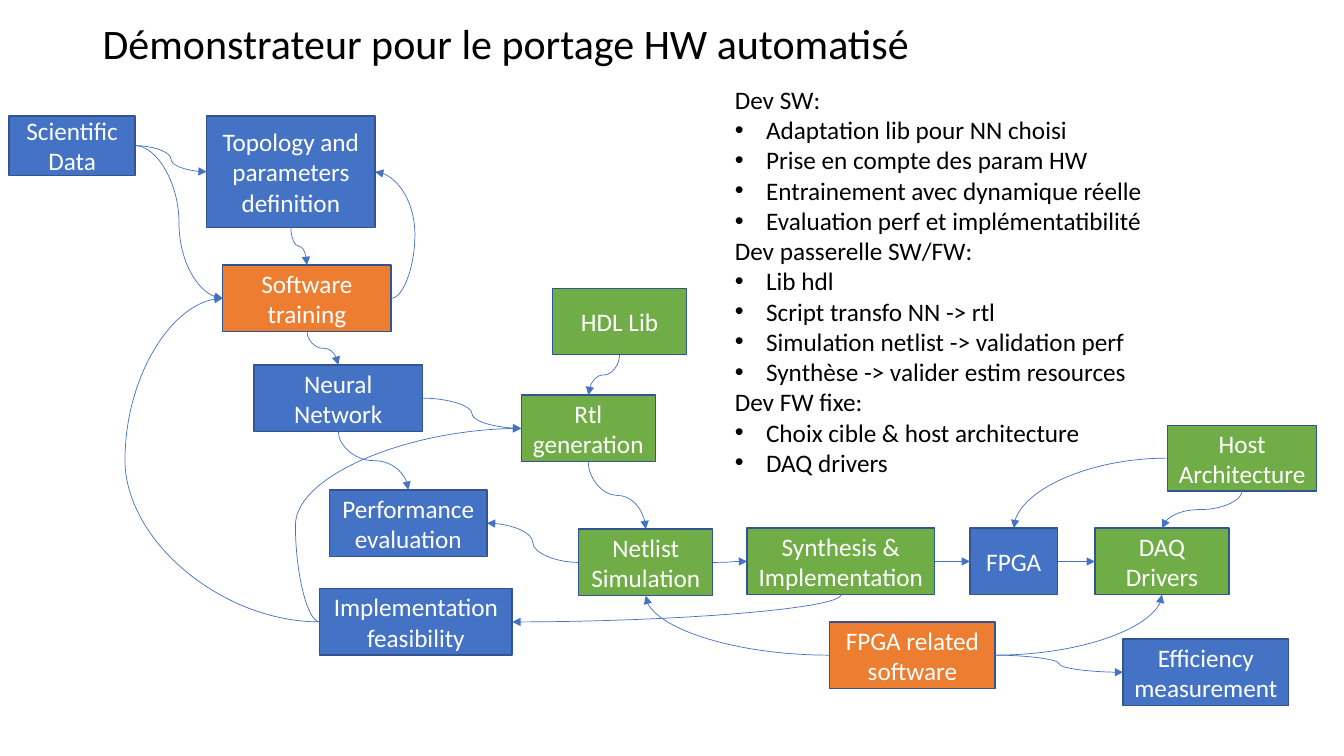
import pptx
import pptx.dml.color
import pptx.enum.shapes
import pptx.enum.text
import pptx.oxml.ns
import pptx.util
from lxml import etree

Inches, Pt = pptx.util.Inches, pptx.util.Pt
RGBColor = pptx.dml.color.RGBColor
MIDDLE = pptx.enum.text.MSO_ANCHOR.MIDDLE
qn = pptx.oxml.ns.qn

BLUE = RGBColor(0x44, 0x72, 0xC4)
GREEN = RGBColor(0x70, 0xAD, 0x47)
ORANGE = RGBColor(0xED, 0x7D, 0x31)
BORDER = RGBColor(0x32, 0x54, 0x91)
BLACK = RGBColor(0, 0, 0)
WHITE = RGBColor(0xFF, 0xFF, 0xFF)

# Connection sites of a rectangle
TOP, LEFT, BOTTOM, RIGHT = range(4)

BOXES = [  # label, left, top, width, height, fill
    ("FPGA", 9.62, 5.24, 0.87, 0.66, BLUE),
    ("Neural Network", 2.52, 3.62, 1.67, 0.66, BLUE),
    ("Topology and parameters definition", 2.05, 1.15, 1.67, 1.11, BLUE),
    ("Scientific Data", 0.09, 1.15, 1.25, 0.59, BLUE),
    ("DAQ Drivers", 10.86, 5.24, 1.33, 0.66, GREEN),
    ("Software training", 2.21, 2.63, 1.67, 0.66, ORANGE),
    ("Performance evaluation", 3.27, 4.86, 1.56, 0.66, BLUE),
    ("Host Architecture", 11.58, 4.22, 1.48, 0.65, GREEN),
    ("Efficiency measurement", 11.14, 6.34, 1.64, 0.66, BLUE),
    ("Implementation feasibility", 3.17, 5.84, 1.91, 0.66, BLUE),
    ("Netlist Simulation", 5.74, 5.25, 1.33, 0.66, GREEN),
    ("Synthesis & Implementation", 7.41, 5.24, 1.86, 0.66, GREEN),
    ("Rtl generation", 5.17, 3.92, 1.33, 0.66, GREEN),
    ("FPGA related software", 8.23, 6.17, 1.64, 0.66, ORANGE),
    ("HDL Lib", 5.48, 2.86, 1.33, 0.66, GREEN),
]

FLOWS = [  # from, site, to, site, position of the bend along the way
    ("Neural Network", RIGHT, "Rtl generation", LEFT, 0.5),
    ("Rtl generation", BOTTOM, "Netlist Simulation", TOP, 0.5),
    ("Topology and parameters definition", BOTTOM, "Software training", TOP, 0.5),
    ("Scientific Data", RIGHT, "Topology and parameters definition", LEFT, 0.5),
    ("Scientific Data", RIGHT, "Software training", LEFT, 0.5),
    ("Software training", BOTTOM, "Neural Network", TOP, 0.5),
    ("Neural Network", BOTTOM, "Performance evaluation", TOP, 0.5),
    ("Synthesis & Implementation", BOTTOM, "Implementation feasibility", RIGHT, None),
    ("Netlist Simulation", RIGHT, "Synthesis & Implementation", LEFT, 0.5),
    ("Synthesis & Implementation", RIGHT, "FPGA", LEFT, 0.5),
    ("FPGA", RIGHT, "DAQ Drivers", LEFT, 0.5),
    ("FPGA related software", LEFT, "Netlist Simulation", BOTTOM, None),
    ("FPGA related software", RIGHT, "DAQ Drivers", BOTTOM, None),
    ("Host Architecture", LEFT, "FPGA", TOP, None),
    ("Host Architecture", BOTTOM, "DAQ Drivers", TOP, 0.5),
    ("FPGA related software", RIGHT, "Efficiency measurement", LEFT, 0.5),
    ("HDL Lib", BOTTOM, "Rtl generation", TOP, 0.5),
    ("Netlist Simulation", LEFT, "Performance evaluation", RIGHT, 0.5),
    ("Implementation feasibility", LEFT, "Software training", LEFT, 2.01),
    ("Software training", RIGHT, "Topology and parameters definition", RIGHT, -1.48),
    ("Implementation feasibility", LEFT, "Rtl generation", LEFT, -0.12),
]

TASKS = [
    ("Dev SW:", ["Adaptation lib pour NN choisi", "Prise en compte des param HW",
                 "Entrainement avec dynamique réelle",
                 "Evaluation perf et implémentatibilité"]),
    ("Dev passerelle SW/FW:", ["Lib hdl", "Script transfo NN -> rtl",
                               "Simulation netlist -> validation perf",
                               "Synthèse -> valider estim resources"]),
    ("Dev FW fixe:", ["Choix cible & host architecture", "DAQ drivers"]),
]


def style_text(p, size, color):
    for r in p.runs:
        r.font.name = "Calibri"
        r.font.size = Pt(size)
        r.font.color.rgb = color


def add_flow(shapes, start, start_site, end, end_site, bend):
    """Connect two boxes with a curved arrow; bend None means a single quarter turn."""
    c = shapes.add_connector(pptx.enum.shapes.MSO_CONNECTOR.CURVE, 0, 0, 0, 0)
    c.begin_connect(start, start_site)
    c.end_connect(end, end_site)
    spPr = c._element.spPr
    geom = spPr.find(qn("a:prstGeom"))

    if start_site == BOTTOM:  # leaves downwards: turn the frame by a quarter
        x1, y1, x2, y2 = c.begin_x, c.begin_y, c.end_x, c.end_y
        length, breadth = abs(y2 - y1), abs(x2 - x1)
        c.left, c.top = (x1 + x2 - length) // 2, (y1 + y2 - breadth) // 2
        c.width, c.height = length, breadth
        xfrm = spPr.find(qn("a:xfrm"))
        to_right = x2 > x1
        xfrm.set("rot", str((270 if to_right else 90) * 60000))
        xfrm.set("flipH", "1" if to_right else "0")
        xfrm.set("flipV", "0")

    if bend is None:
        geom.set("prst", "curvedConnector2")
    elif bend != 0.5:
        guides = geom.find(qn("a:avLst"))
        etree.SubElement(guides, qn("a:gd"), name="adj1", fmla=f"val {round(bend * 100000)}")

    c.line.color.rgb = BLUE
    c.line.width = Pt(0.5)
    etree.SubElement(c.line._get_or_add_ln(), qn("a:tailEnd"), type="triangle")
    etree.SubElement(spPr, qn("a:effectLst"))


prs = pptx.Presentation()
prs.slide_width, prs.slide_height = Inches(13.33), Inches(7.5)
s = prs.slides.add_slide(prs.slide_layouts[6])

# Title
title = s.shapes.add_textbox(Inches(0.92), Inches(0), Inches(11.5), Inches(0.92))
tf = title.text_frame
tf.word_wrap = True
tf.vertical_anchor = MIDDLE
tf.text = "Démonstrateur pour le portage HW automatisé"
tf.paragraphs[0].line_spacing = 0.9
style_text(tf.paragraphs[0], 30, BLACK)

# Task list
tasks = s.shapes.add_textbox(Inches(7.19), Inches(0.74), Inches(4.73), Inches(4.09))
tf = tasks.text_frame
tf.word_wrap = True
tf.vertical_anchor = MIDDLE
lines = [line for heading, items in TASKS
         for line in [(heading, False)] + [(item, True) for item in items]]
for i, (text, bulleted) in enumerate(lines):
    p = tf.add_paragraph() if i else tf.paragraphs[0]
    p.text = text
    if bulleted:
        pPr = p._p.get_or_add_pPr()
        pPr.set("marL", str(Inches(0.31)))
        pPr.set("indent", str(-Inches(0.31)))
        etree.SubElement(pPr, qn("a:buFont"), typeface="Arial")
        etree.SubElement(pPr, qn("a:buChar"), char="•")
    style_text(p, 18, BLACK)

# Flow diagram
boxes = {}
for label, left, top, width, height, fill in BOXES:
    sp = s.shapes.add_shape(pptx.enum.shapes.MSO_SHAPE.RECTANGLE,
                            Inches(left), Inches(top), Inches(width), Inches(height))
    sp.shadow.inherit = False
    sp.fill.solid()
    sp.fill.fore_color.rgb = fill
    sp.line.color.rgb = BORDER
    sp.line.width = Pt(1)
    tf = sp.text_frame
    tf.word_wrap = True
    tf.vertical_anchor = MIDDLE
    tf.text = label
    tf.paragraphs[0].alignment = pptx.enum.text.PP_ALIGN.CENTER
    style_text(tf.paragraphs[0], 18, WHITE)
    boxes[label] = sp

for start, start_site, end, end_site, bend in FLOWS:
    add_flow(s.shapes, boxes[start], start_site, boxes[end], end_site, bend)

prs.save("out.pptx")
